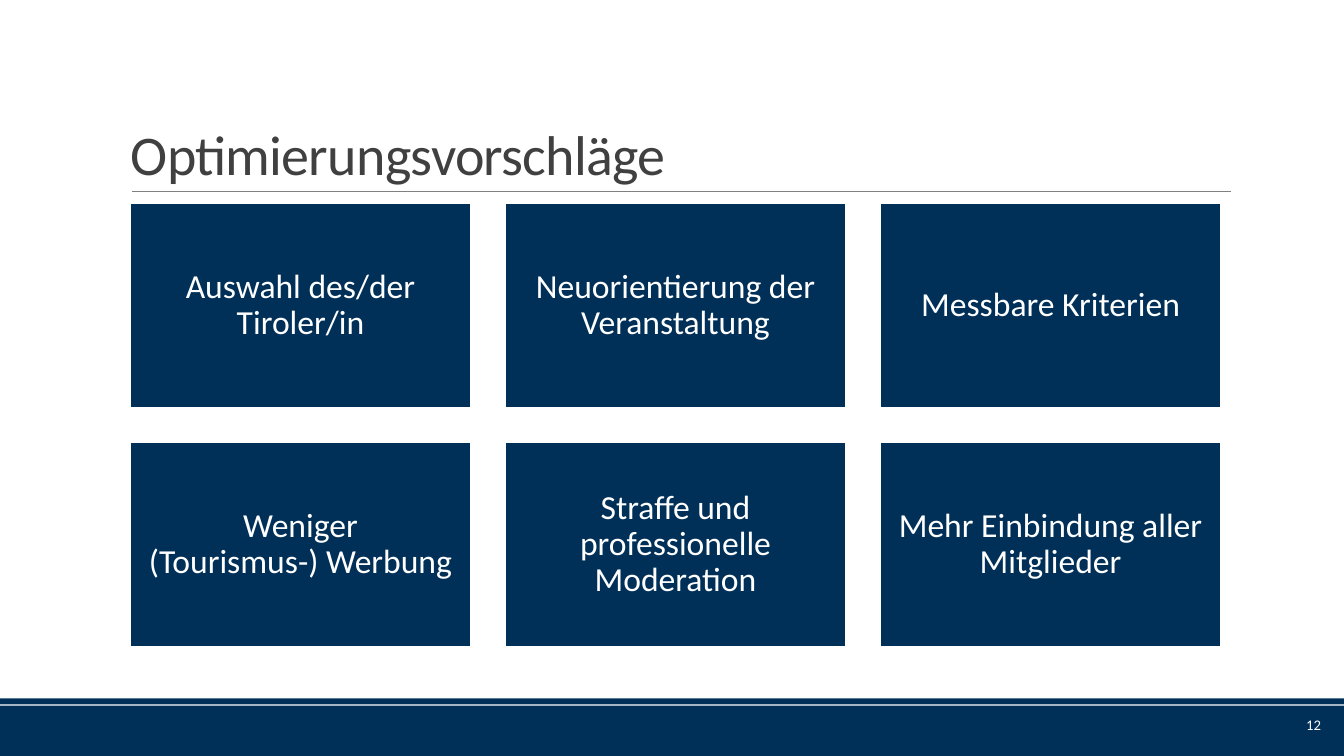
from dataclasses import dataclass

from lxml import etree
from pptx import Presentation
from pptx.dml.color import RGBColor
from pptx.enum import shapes, text
from pptx.oxml import ns
from pptx.util import Inches, Pt

COLORS = {"navy": "003058", "white": "FFFFFF", "rule": "808080", "title": "404040"}
FONT = "Calibri"

PROPOSALS = [
    "Auswahl des/der Tiroler/in",
    "Neuorientierung der Veranstaltung",
    "Messbare Kriterien",
    "Weniger\n(Tourismus-) Werbung",
    "Straffe und professionelle Moderation",
    "Mehr Einbindung aller Mitglieder",
]
COLUMNS = 3
GRID_LEFT, GRID_TOP = 1.29, 2.02
TILE_WIDTH, TILE_HEIGHT = 3.38, 2.03
GAP = 0.34


@dataclass(frozen=True)
class Box:
    left: float
    top: float
    width: float
    height: float

    def lengths(self) -> tuple:
        return tuple(Inches(v) for v in (self.left, self.top, self.width, self.height))


FOOTER_BANDS = [Box(0, 7, 13.33, 0.5), Box(0, 6.93, 13.33, 0.06)]


def color(name: str) -> RGBColor:
    return RGBColor.from_string(COLORS[name])


def write(shape, content: str, *, size: float, ink: str = "white",
          align=text.PP_ALIGN.LEFT, anchor=text.MSO_ANCHOR.MIDDLE,
          line_spacing: float = 1.0, tracking: float = 0,
          inset: float | None = None) -> None:
    """Fill a shape with one paragraph; newlines become line breaks."""
    frame = shape.text_frame
    frame.word_wrap = True
    frame.vertical_anchor = anchor
    if inset is not None:
        frame.margin_left = frame.margin_right = Inches(inset)
        frame.margin_top = frame.margin_bottom = Inches(inset)
    paragraph = frame.paragraphs[0]
    paragraph.alignment = align
    paragraph.line_spacing = line_spacing
    for index, line in enumerate(content.split("\n")):
        if index:
            paragraph.add_line_break()
        run = paragraph.add_run()
        run.text = line
        run.font.name = FONT
        run.font.size = Pt(size)
        run.font.color.rgb = color(ink)
        if tracking:
            run.font._element.set("spc", str(round(tracking * 100)))


def add_block(slide, box: Box, outline: str | None = None):
    block = slide.shapes.add_shape(shapes.MSO_SHAPE.RECTANGLE, *box.lengths())
    block.shadow.inherit = False
    block.fill.solid()
    block.fill.fore_color.rgb = color("navy")
    if outline:
        block.line.color.rgb = color(outline)
        block.line.width = Pt(1.25)
    else:
        block.line.fill.background()
    return block


def add_title_rule(slide) -> None:
    rule = slide.shapes.add_connector(
        shapes.MSO_CONNECTOR.STRAIGHT,
        Inches(1.31), Inches(1.9), Inches(12.21), Inches(1.9))
    rule.line.color.rgb = color("rule")
    rule.line.width = Pt(0.5)
    etree.SubElement(rule._element.spPr, ns.qn("a:effectLst"))


def add_proposals(slide) -> None:
    for index, proposal in enumerate(PROPOSALS):
        row, column = divmod(index, COLUMNS)
        tile = Box(GRID_LEFT + column * (TILE_WIDTH + GAP),
                   GRID_TOP + row * (TILE_HEIGHT + GAP),
                   TILE_WIDTH, TILE_HEIGHT)
        write(add_block(slide, tile, outline="white"), proposal, size=24,
              align=text.PP_ALIGN.CENTER, line_spacing=0.9, inset=0.1)


def main() -> None:
    deck = Presentation()
    deck.slide_width, deck.slide_height = Inches(13.33), Inches(7.5)
    slide = deck.slides.add_slide(deck.slide_layouts[6])

    for band in FOOTER_BANDS:
        add_block(slide, band)
    add_title_rule(slide)

    title = slide.shapes.add_textbox(*Box(1.2, 0.31, 11, 1.59).lengths())
    write(title, "Optimierungsvorschläge", size=40, ink="title",
          anchor=text.MSO_ANCHOR.BOTTOM, line_spacing=0.85, tracking=-0.5)

    add_proposals(slide)

    page_number = slide.shapes.add_textbox(*Box(11.77, 6.99, 1.43, 0.4).lengths())
    write(page_number, "12", size=10.5, align=text.PP_ALIGN.RIGHT)

    deck.save("out.pptx")


if __name__ == "__main__":
    main()
